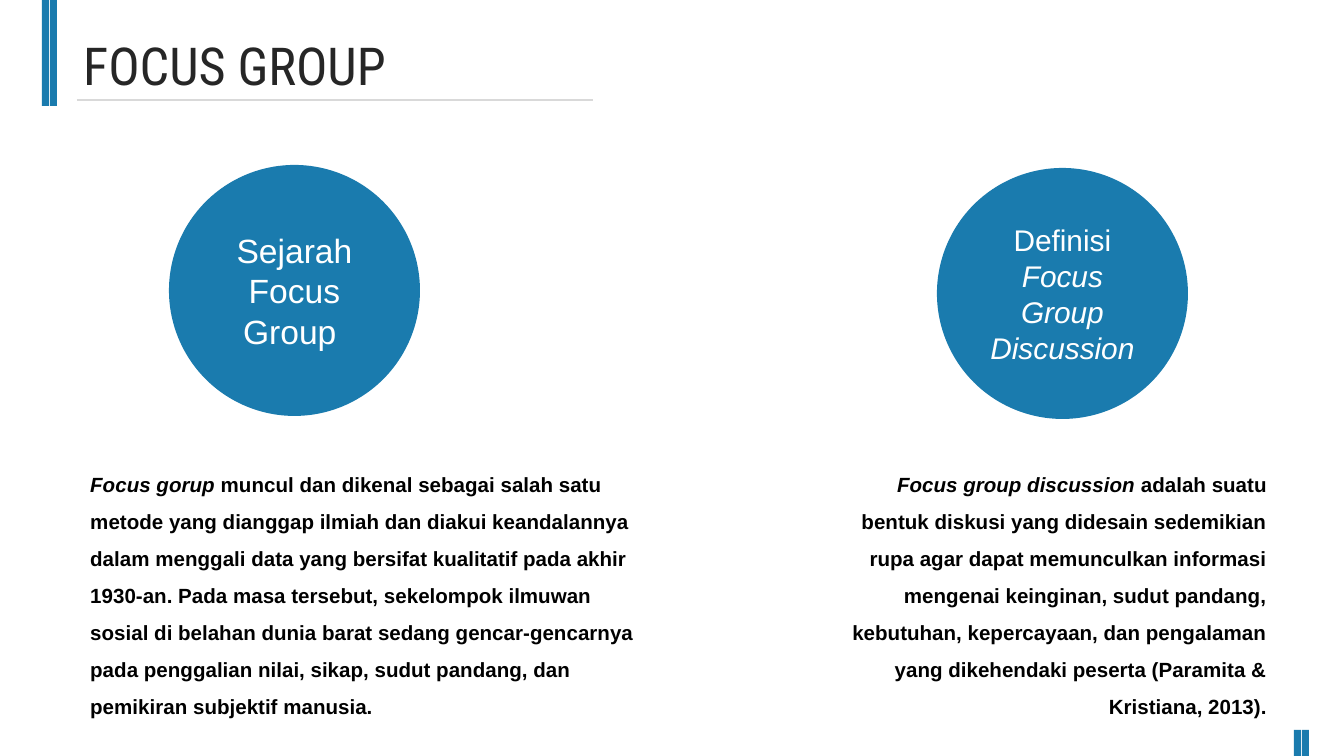
from lxml import etree
from pptx import Presentation
from pptx.dml.color import RGBColor
from pptx.enum.shapes import MSO_CONNECTOR, MSO_SHAPE
from pptx.enum.text import MSO_ANCHOR, PP_ALIGN
from pptx.oxml.ns import qn
from pptx.util import Pt

RECTANGLE, OVAL = MSO_SHAPE.RECTANGLE, MSO_SHAPE.OVAL
STRAIGHT = MSO_CONNECTOR.STRAIGHT
TOP, MIDDLE = MSO_ANCHOR.TOP, MSO_ANCHOR.MIDDLE
LEFT, CENTER, RIGHT = PP_ALIGN.LEFT, PP_ALIGN.CENTER, PP_ALIGN.RIGHT

WIDTH, HEIGHT = 1344, 756
SCALE = 914400 / 134.4
BLUE, WHITE, BLACK, DARK, GREY = "1A7BAE", "FFFFFF", "000000", "262626", "D9D9D9"

TITLE = "FOCUS GROUP"
TITLE_BOX = (70, 27, 568, 77)
TITLE_RULE = (77, 100, 593, 100)

BAR_WIDTH, BAR_STEP = 7, 8
BAR_PAIRS = [(42, 0, 106), (1294, 730, 26)]

CIRCLE_SIZE = 251
BODY_TOP, BODY_HEIGHT = 453, 274

TOPICS = [
    {
        "heading": [("Sejarah Focus Group ", False)],
        "heading_size": 18,
        "circle": (169, 165),
        "body": [
            ("Focus gorup ", True),
            ("muncul dan dikenal sebagai salah satu metode yang dianggap ilmiah dan "
             "diakui keandalannya dalam menggali data yang bersifat kualitatif pada "
             "akhir 1930-an. Pada masa tersebut, sekelompok ilmuwan sosial di belahan "
             "dunia barat sedang gencar-gencarnya pada penggalian nilai, sikap, sudut "
             "pandang, dan pemikiran subjektif manusia.", False),
        ],
        "body_left": 77,
        "body_width": 582,
        "align": LEFT,
    },
    {
        "heading": [("Definisi ", False), ("Focus Group Discussion ", True)],
        "heading_size": 16,
        "circle": (937, 168),
        "body": [
            ("Focus group discussion ", True),
            ("adalah suatu bentuk diskusi yang didesain sedemikian rupa agar dapat "
             "memunculkan informasi mengenai keinginan, sudut pandang, kebutuhan, "
             "kepercayaan, dan pengalaman yang dikehendaki peserta (Paramita & "
             "Kristiana, 2013).", False),
        ],
        "body_left": 823,
        "body_width": 457,
        "align": RIGHT,
    },
]


def px(value):
    return round(value * SCALE)


def color(value):
    return RGBColor.from_string(value)


def add_filled(slide, kind, *box):
    shape = slide.shapes.add_shape(kind, *map(px, box))
    shape.shadow.inherit = False
    shape.fill.solid()
    shape.fill.fore_color.rgb = color(BLUE)
    shape.line.fill.background()
    return shape


def write(shape, runs, size, ink, align, font="Arial", bold=False, spacing=None, anchor=TOP):
    frame = shape.text_frame
    frame.word_wrap = True
    frame.vertical_anchor = anchor
    paragraph = frame.paragraphs[0]
    paragraph.alignment = align
    paragraph.line_spacing = spacing
    paragraph.font.name = font
    paragraph.font.size = Pt(size)
    paragraph.font.bold = bold
    paragraph.font.color.rgb = color(ink)
    for text, italic in runs:
        run = paragraph.add_run()
        run.text = text
        run.font.name = font
        run.font.size = Pt(size)
        run.font.bold = bold
        run.font.italic = italic
        run.font.color.rgb = color(ink)


def add_text(slide, box, *args, **options):
    write(slide.shapes.add_textbox(*map(px, box)), *args, **options)


def add_rule(slide, ends):
    rule = slide.shapes.add_connector(STRAIGHT, *map(px, ends))
    rule.line.color.rgb = color(GREY)
    rule.line.width = Pt(0.75)
    etree.SubElement(rule._element.spPr, qn("a:effectLst"))


def add_topic(slide, topic):
    circle = add_filled(slide, OVAL, *topic["circle"], CIRCLE_SIZE, CIRCLE_SIZE)
    write(circle, topic["heading"], topic["heading_size"], WHITE, CENTER, anchor=MIDDLE)
    body_box = (topic["body_left"], BODY_TOP, topic["body_width"], BODY_HEIGHT)
    add_text(slide, body_box, topic["body"], 11, BLACK, topic["align"], bold=True, spacing=1.5)


def main():
    presentation = Presentation()
    presentation.slide_width = px(WIDTH)
    presentation.slide_height = px(HEIGHT)
    slide = presentation.slides.add_slide(presentation.slide_layouts[6])

    for left, top, height in BAR_PAIRS:
        for index in range(2):
            add_filled(slide, RECTANGLE, left + index * BAR_STEP, top, BAR_WIDTH, height)

    add_text(slide, TITLE_BOX, [(TITLE, False)], 28, DARK, LEFT, font="Roboto Condensed")
    add_rule(slide, TITLE_RULE)
    for topic in TOPICS:
        add_topic(slide, topic)

    presentation.save("out.pptx")


if __name__ == "__main__":
    main()
